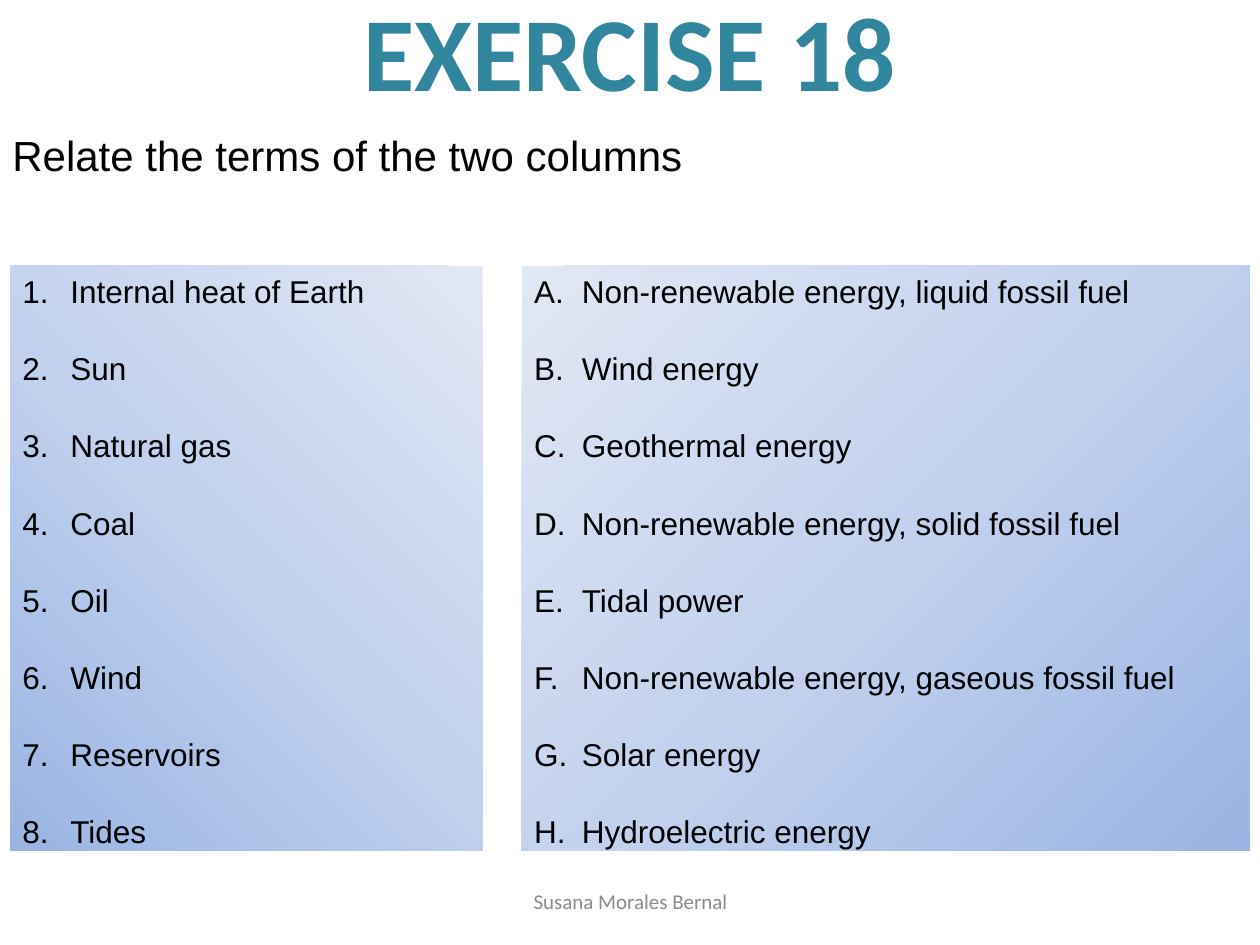
from dataclasses import dataclass

from pptx import Presentation
from pptx.dml.color import RGBColor
from pptx.enum.shapes import MSO_SHAPE
from pptx.enum.text import MSO_ANCHOR as Anchor, PP_ALIGN as Align
from pptx.oxml import parse_xml
from pptx.oxml.ns import nsdecls
from pptx.slide import Slide
from pptx.util import Inches, Pt

TEAL = RGBColor(0x31, 0x85, 0x9C)
GRAY = RGBColor(0x8C, 0x8C, 0x8C)
BLACK = RGBColor(0, 0, 0)
GRADIENT = (
    (0, RGBColor(0x9A, 0xB5, 0xE4)),
    (50, RGBColor(0xC2, 0xD1, 0xED)),
    (100, RGBColor(0xE1, 0xE8, 0xF5)),
)
COLUMN_TOP, COLUMN_HEIGHT = 2.11, 4.64
INDENT = Inches(0.38)


@dataclass(frozen=True)
class Label:
    text: str
    left: float
    top: float
    width: float
    height: float
    font: str
    size: int
    color: RGBColor
    align: Align = Align.CENTER
    anchor: Anchor = Anchor.MIDDLE
    bold: bool = False


@dataclass(frozen=True)
class TermColumn:
    left: float
    width: float
    numbering: str
    dark_corner: str
    terms: tuple[str, ...]


LABELS = (
    Label("EXERCISE 18", 0.5, -0.23, 9, 1.25, "Calibri", 60, TEAL, bold=True),
    Label("Susana Morales Bernal", 3.42, 6.95, 3.17, 0.4, "Calibri", 12, GRAY),
    Label("Relate the terms of the two columns", 0, 0.98, 10, 0.51,
          "Arial", 24, BLACK, Align.JUSTIFY, Anchor.TOP),
)
COLUMNS = (
    TermColumn(4.14, 5.78, "alphaUcPeriod", 'l="100000" t="100000"', (
        "Non-renewable energy, liquid fossil fuel",
        "Wind energy",
        "Geothermal energy",
        "Non-renewable energy, solid fossil fuel",
        "Tidal power",
        "Non-renewable energy, gaseous fossil fuel",
        "Solar energy",
        "Hydroelectric energy",
    )),
    TermColumn(0.08, 3.75, "arabicPeriod", 't="100000" r="100000"', (
        "Internal heat of Earth", "Sun", "Natural gas", "Coal",
        "Oil", "Wind", "Reservoirs", "Tides",
    )),
)


def format_runs(paragraph, name: str, size: int, color: RGBColor,
                bold: bool = False) -> None:
    for run in paragraph.runs:
        run.font.name = name
        run.font.size = Pt(size)
        run.font.bold = bold
        run.font.color.rgb = color


def add_label(slide: Slide, label: Label) -> None:
    shape = slide.shapes.add_textbox(
        Inches(label.left), Inches(label.top),
        Inches(label.width), Inches(label.height))
    text_frame = shape.text_frame
    text_frame.word_wrap = True
    text_frame.vertical_anchor = label.anchor
    text_frame.text = label.text
    paragraph = text_frame.paragraphs[0]
    paragraph.alignment = label.align
    format_runs(paragraph, label.font, label.size, label.color, label.bold)


def fill_from_corner(shape, dark_corner: str) -> None:
    stops = "".join(
        f'<a:gs pos="{percent * 1000}"><a:srgbClr val="{color}"/></a:gs>'
        for percent, color in GRADIENT)
    gradient = parse_xml(
        f'<a:gradFill {nsdecls("a")} rotWithShape="1"><a:gsLst>{stops}</a:gsLst>'
        f'<a:path path="circle"><a:fillToRect {dark_corner}/></a:path>'
        '</a:gradFill>')
    shape.fill.background()
    properties = shape.element.spPr
    properties.replace(properties.find("{*}noFill"), gradient)


def number_paragraph(paragraph, numbering: str) -> None:
    properties = paragraph._p.get_or_add_pPr()
    properties.set("marL", str(INDENT))
    properties.set("indent", str(-INDENT))
    properties.append(parse_xml(f'<a:buFont {nsdecls("a")} typeface="+mj-lt"/>'))
    properties.append(parse_xml(
        f'<a:buAutoNum {nsdecls("a")} type="{numbering}"/>'))


def add_term_column(slide: Slide, column: TermColumn) -> None:
    shape = slide.shapes.add_shape(
        MSO_SHAPE.RECTANGLE, Inches(column.left), Inches(COLUMN_TOP),
        Inches(column.width), Inches(COLUMN_HEIGHT))
    shape.shadow.inherit = False
    shape.line.fill.background()
    fill_from_corner(shape, column.dark_corner)
    text_frame = shape.text_frame
    text_frame.word_wrap = True
    text_frame.vertical_anchor = Anchor.TOP
    text_frame.text = "\n".join(column.terms)
    for paragraph in text_frame.paragraphs:
        paragraph.alignment = Align.LEFT
        paragraph.space_after = Pt(22.5)
        number_paragraph(paragraph, column.numbering)
        format_runs(paragraph, "Arial", 18, BLACK)


def main() -> None:
    presentation = Presentation()
    presentation.slide_width = Inches(10)
    presentation.slide_height = Inches(7.5)
    slide = presentation.slides.add_slide(presentation.slide_layouts[6])
    for column in COLUMNS:
        add_term_column(slide, column)
    for label in LABELS:
        add_label(slide, label)
    presentation.save("out.pptx")


if __name__ == "__main__":
    main()
